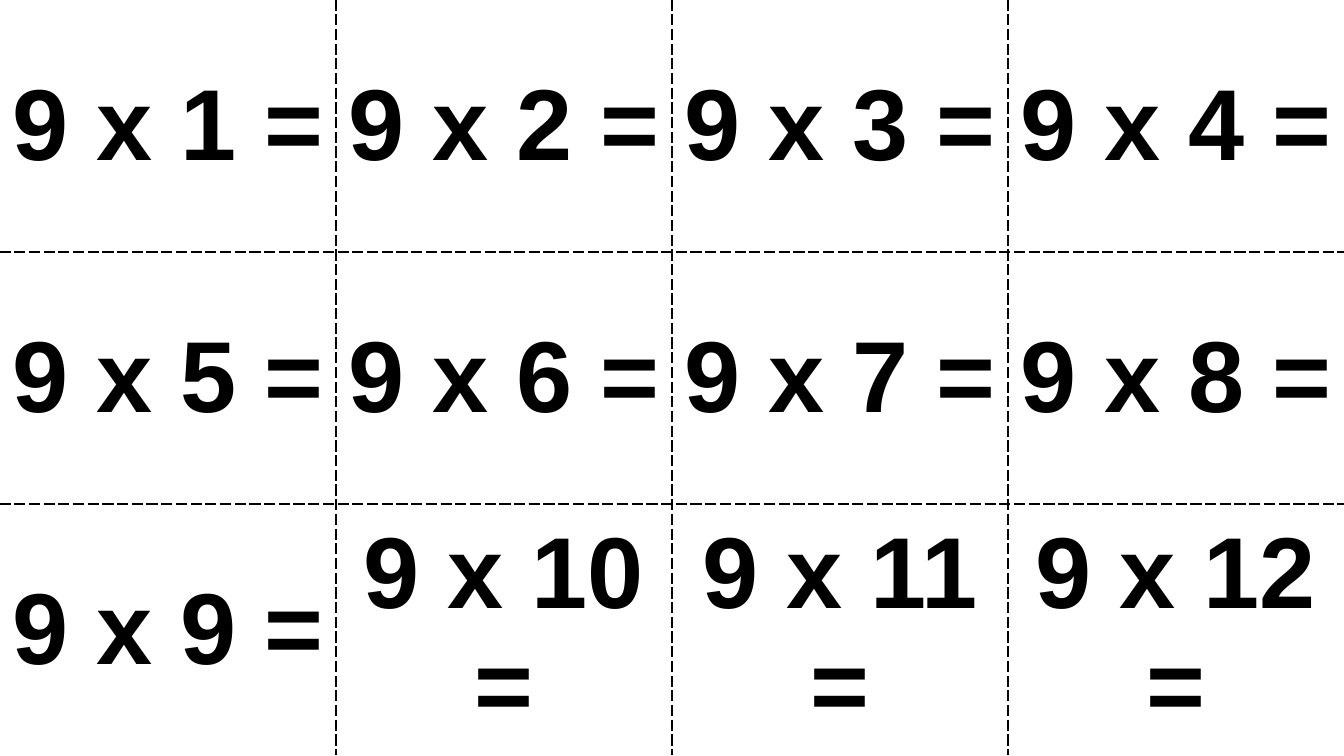
from lxml.etree import SubElement
from pptx import Presentation
from pptx.dml.color import RGBColor
from pptx.enum.text import MSO_ANCHOR, PP_ALIGN
from pptx.oxml.ns import qn
from pptx.util import Inches, Pt

COLORS = {"ink": "000000", "paper": "FFFFFF"}
SLIDE_WIDTH, SLIDE_HEIGHT = Inches(13.33), Inches(7.5)
ROWS, COLUMNS = 3, 4
FACTOR = 9


def add_border(cell, side, color, dash):
    properties = cell._tc.get_or_add_tcPr()
    line = SubElement(properties, qn(f"a:{side}"), w=str(Pt(1)))
    fill = SubElement(line, qn("a:solidFill"))
    SubElement(fill, qn("a:srgbClr"), val=color)
    SubElement(line, qn("a:prstDash"), val=dash)


def add_cut_lines(cell, row, column):
    """Dash the sides shared by two cards and hide those on the slide edge."""
    on_edge = {
        "lnL": column == 0,
        "lnR": column == COLUMNS - 1,
        "lnT": row == 0,
        "lnB": row == ROWS - 1,
    }
    for side, hidden in on_edge.items():
        if hidden:
            add_border(cell, side, COLORS["paper"], "solid")
        else:
            add_border(cell, side, COLORS["ink"], "dash")


def fill_card(cell, text):
    cell.fill.solid()
    cell.fill.fore_color.rgb = RGBColor.from_string(COLORS["paper"])
    cell.vertical_anchor = MSO_ANCHOR.MIDDLE
    paragraph = cell.text_frame.paragraphs[0]
    paragraph.text = text
    paragraph.alignment = PP_ALIGN.CENTER
    font = paragraph.runs[0].font
    font.name = "Arial"
    font.size = Pt(72)
    font.bold = True
    font.color.rgb = RGBColor.from_string(COLORS["ink"])


def add_flash_cards(slide):
    frame = slide.shapes.add_table(
        ROWS, COLUMNS, Inches(0), Inches(0), SLIDE_WIDTH, SLIDE_HEIGHT
    )
    table = frame.table
    table.first_row = False
    table.horz_banding = False
    for row in range(ROWS):
        for column in range(COLUMNS):
            cell = table.cell(row, column)
            add_cut_lines(cell, row, column)
            fill_card(cell, f"{FACTOR} x {row * COLUMNS + column + 1} =")


def main():
    presentation = Presentation()
    presentation.slide_width = SLIDE_WIDTH
    presentation.slide_height = SLIDE_HEIGHT
    slide = presentation.slides.add_slide(presentation.slide_layouts[6])
    add_flash_cards(slide)
    presentation.save("out.pptx")


if __name__ == "__main__":
    main()
